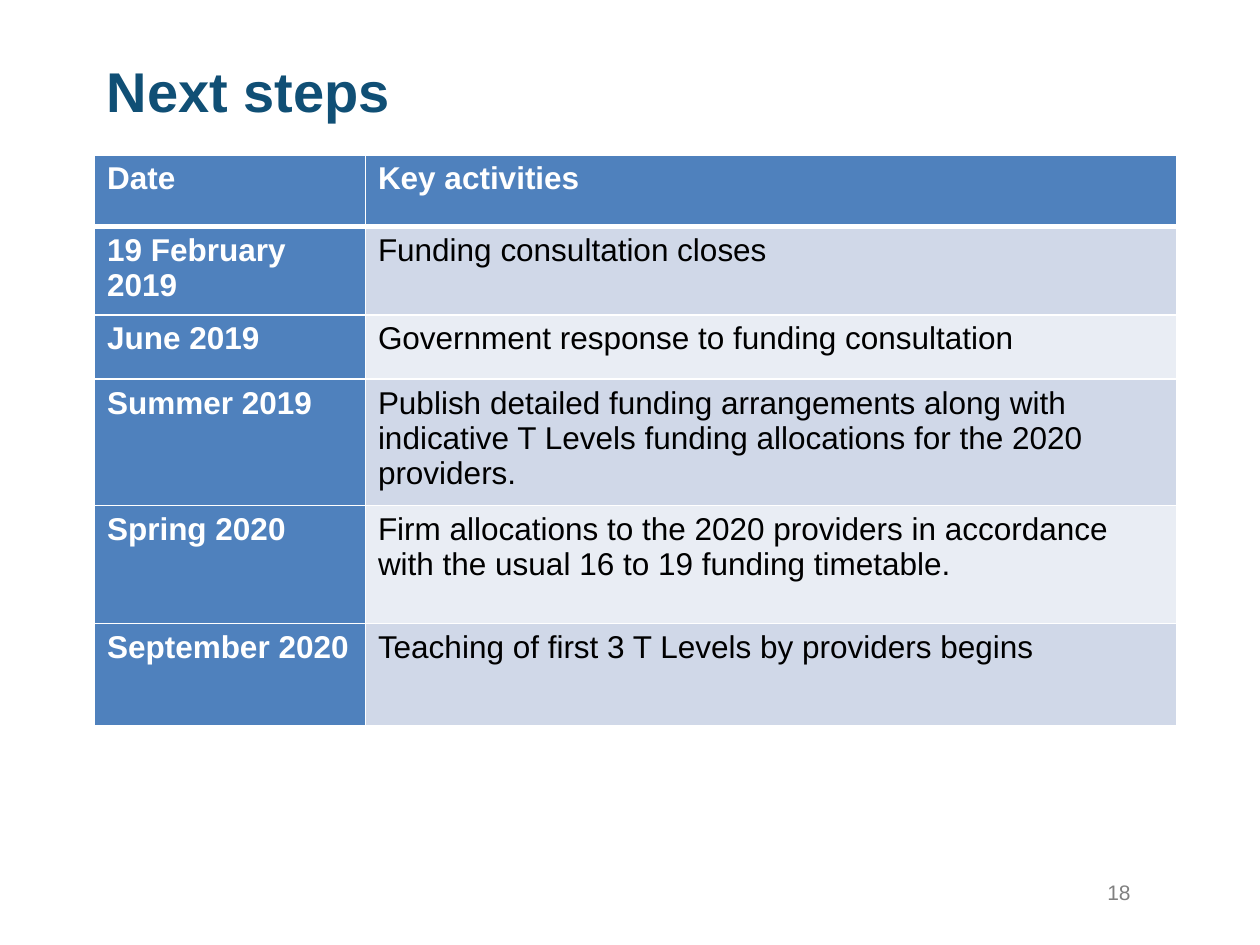
from lxml import etree
from pptx import Presentation
from pptx.dml.color import RGBColor
from pptx.enum import text
from pptx.oxml import ns
from pptx.util import Inches, Pt

NAVY = RGBColor(0x10, 0x4F, 0x75)
BLUE = RGBColor(0x4F, 0x81, 0xBD)
BANDS = RGBColor(0xD0, 0xD8, 0xE8), RGBColor(0xE9, 0xED, 0xF4)
WHITE = RGBColor(0xFF, 0xFF, 0xFF)
BLACK = RGBColor(0, 0, 0)
GREY = RGBColor(0x80, 0x80, 0x80)

COLUMN_WIDTHS = 2.15, 6.44
STEPS = [  # row height in inches, date, activity
    (0.57, "Date", "Key activities"),
    (0.66, "19 February 2019", "Funding consultation closes"),
    (0.51, "June 2019", "Government response to funding consultation"),
    (0.94, "Summer 2019", "Publish detailed funding arrangements along with indicative "
                          "T Levels funding allocations for the 2020 providers."),
    (0.94, "Spring 2020", "Firm allocations to the 2020 providers in accordance with "
                          "the usual 16 to 19 funding timetable."),
    (0.81, "September 2020", "Teaching of first 3 T Levels by providers begins"),
]


def write(frame, words, size, color, bold=False):
    span = frame.paragraphs[0].add_run()
    span.text = words
    span.font.name = "Arial"
    span.font.size = Pt(size)
    span.font.bold = bold
    span.font.color.rgb = color


def add_label(page, box, words, size, color, bold=False, anchor=text.MSO_ANCHOR.TOP):
    frame = page.shapes.add_textbox(*map(Inches, box)).text_frame
    frame.word_wrap = True
    frame.vertical_anchor = anchor
    write(frame, words, size, color, bold)


def set_borders(cell, top, bottom):
    """Draw white cell borders; top and bottom are widths in points."""
    properties = cell._tc.get_or_add_tcPr()
    widths = {"lnL": 1, "lnR": 1, "lnT": top, "lnB": bottom}
    for position, (side, width) in enumerate(widths.items()):
        line = etree.Element(ns.qn(f"a:{side}"), w=str(Pt(width)))
        fill = etree.SubElement(line, ns.qn("a:solidFill"))
        etree.SubElement(fill, ns.qn("a:srgbClr"), val=str(WHITE))
        properties.insert(position, line)


def add_steps_table(page, box):
    table = page.shapes.add_table(len(STEPS), len(COLUMN_WIDTHS), *map(Inches, box)).table
    for column, width in zip(table.columns, COLUMN_WIDTHS):
        column.width = Inches(width)
    for row, (height, *entries) in enumerate(STEPS):
        table.rows[row].height = Inches(height)
        for column, words in enumerate(entries):
            cell = table.cell(row, column)
            heading = row == 0 or column == 0
            cell.fill.solid()
            cell.fill.fore_color.rgb = BLUE if heading else BANDS[(row - 1) % 2]
            write(cell.text_frame, words, 18, WHITE if heading else BLACK, heading)
            set_borders(cell, top=3 if row == 1 else 1, bottom=3 if row == 0 else 1)


def main():
    deck = Presentation()
    deck.slide_width, deck.slide_height = Inches(10), Inches(7.5)
    page = deck.slides.add_slide(deck.slide_layouts[6])
    add_label(page, (0.75, 0.36, 8.5, 0.71), "Next steps", 32, NAVY, True,
              text.MSO_ANCHOR.MIDDLE)
    add_steps_table(page, (0.75, 1.23, 8.58, 4.43))
    add_label(page, (8.69, 6.93, 0.56, 0.4), "18", 12, GREY)
    deck.save("out.pptx")


if __name__ == "__main__":
    main()
